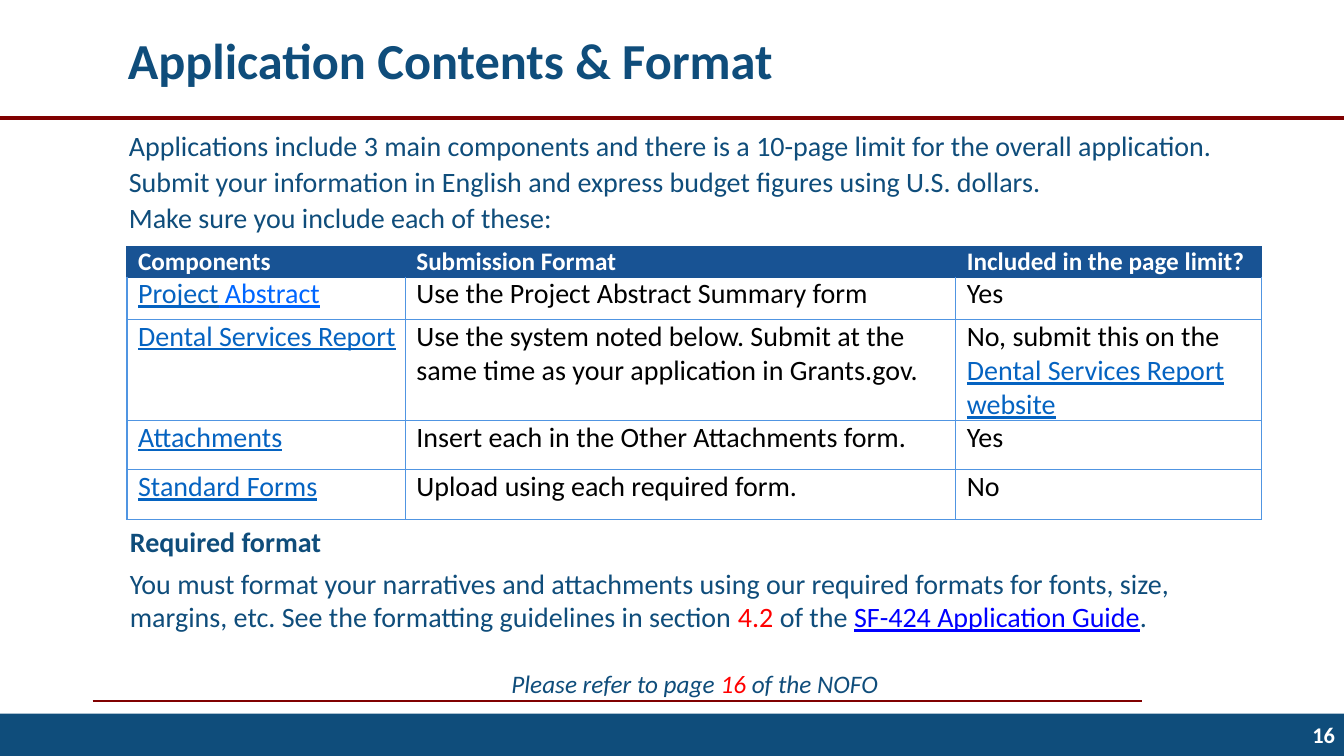
"""Build the slide on application contents and format."""
from lxml import etree
from pptx import Presentation
from pptx import util as u
from pptx.dml.color import RGBColor
from pptx.enum import shapes, text
from pptx.oxml import ns

NAVY = RGBColor(0x0F, 0x4D, 0x7B)
MAROON = RGBColor(0x80, 0x00, 0x00)
HEADER = RGBColor(0x18, 0x53, 0x94)
GRID = RGBColor(0x50, 0x95, 0xE2)
LINK = RGBColor(0x05, 0x63, 0xC1)
BRIGHT_LINK = RGBColor(0x00, 0x66, 0xFF)
GUIDE_LINK = RGBColor(0x00, 0x00, 0xFF)
RED = RGBColor(0xFF, 0x00, 0x00)
BLACK = RGBColor(0x00, 0x00, 0x00)
WHITE = RGBColor(0xFF, 0xFF, 0xFF)

WIDTH, HEIGHT = 13.33, 7.5
BAND = 0.42
BAND_TOP = HEIGHT - BAND
TITLE_HEIGHT = 1.17


def link(words, color=LINK):
    return words, {"color": color, "underline": True}


def red(words):
    return words, {"color": RED}


MIDDLE = {"vertical_anchor": text.MSO_ANCHOR.MIDDLE}
INTRO_SPACING = {"line_spacing": u.Pt(22), "space_before": u.Pt(2), "space_after": u.Pt(2)}
AFTER = {"space_after": u.Pt(6)}

TEXTS = [
    {"place": (1.17, 0, 11.25, TITLE_HEIGHT), "frame": MIDDLE,
     "font": {"size": 36, "bold": True},
     "lines": [["Application Contents & Format"]]},
    {"place": (1.18, 1.25, 11.96, 1.2), "font": {"size": 20}, "para": INTRO_SPACING,
     "lines": [
         ["Applications include 3 main components and there is a 10-page limit for the overall application."],
         ["Submit your information in English and express budget figures using U.S. dollars."],
         ["Make sure you include each of these:"]]},
    {"place": (1.19, 5.15, 11.4, 1.19), "font": {"size": 20}, "para": AFTER,
     "lines": [
         [("Required format", {"bold": True})],
         ["You must format your narratives and attachments using our required formats for fonts, size, "
          "margins, etc. See the formatting guidelines in section ", red("4.2"), " of the ",
          link("SF-424 Application Guide", GUIDE_LINK), "."]]},
    {"place": (4.89, 6.58, 4, 0.4), "font": {"size": 18, "italic": True},
     "para": {"alignment": text.PP_ALIGN.CENTER},
     "lines": [["Please refer to page ", red("16 "), "of the NOFO"]]},
    {"place": (12.28, BAND_TOP, 1.06, BAND), "frame": MIDDLE,
     "font": {"size": 16, "bold": True, "color": WHITE},
     "para": {"alignment": text.PP_ALIGN.RIGHT}, "lines": [["16"]]},
]

COLUMNS = [2.76, 5.46, 3.03]
ROWS = [0.3, 0.42, 1, 0.49, 0.49]
TABLE_LEFT, TABLE_TOP = 1.26, 2.45
CELLS = [
    [["Components"], ["Submission Format"], ["Included in the page limit?"]],
    [[link("Project"), link(" Abstract", BRIGHT_LINK)],
     ["Use the Project Abstract Summary form"], ["Yes"]],
    [[link("Dental Services Report")],
     ["Use the system noted below. Submit at the same time as your application in Grants.gov."],
     ["No, submit this on the ", link("Dental Services Report website")]],
    [[link("Attachments")], ["Insert each in the Other Attachments form."], ["Yes"]],
    [[link("Standard Forms")], ["Upload using each required form."], ["No"]],
]
HEADER_FONT = {"size": 18, "bold": True, "color": WHITE}
CELL_FONT = {"size": 20, "bold": False, "color": BLACK}
CELL_FRAME = {"margin_left": u.Inches(0.11), "margin_right": u.Inches(0.07),
              "margin_top": 0, "margin_bottom": 0}

RULES = [(0, WIDTH, TITLE_HEIGHT, 3), (0.92, 11.33, 6.95, 1.5)]


def apply(target, values):
    for name, value in values.items():
        setattr(target, name, value)


def inches(*lengths):
    return [u.Inches(length) for length in lengths]


def write_line(para, pieces, font):
    for piece in pieces:
        words, changes = piece if isinstance(piece, tuple) else (piece, {})
        values = {"name": "Calibri", "color": NAVY, **font, **changes}
        span = para.add_run()
        span.text = words
        span.font.color.rgb = values.pop("color")
        values["size"] = u.Pt(values["size"])
        apply(span.font, values)


def add_text(page, item):
    box = page.shapes.add_textbox(*inches(*item["place"]))
    frame = box.text_frame
    apply(frame, {"word_wrap": True, **item.get("frame", {})})
    for index, pieces in enumerate(item["lines"]):
        para = frame.add_paragraph() if index else frame.paragraphs[0]
        apply(para, item.get("para", {}))
        if index == 0:
            para.space_before = u.Pt(0)
        write_line(para, pieces, item["font"])


def add_rule(page, left, right, top, weight):
    rule = page.shapes.add_connector(shapes.MSO_CONNECTOR.STRAIGHT, *inches(left, top, right, top))
    rule.line.color.rgb = MAROON
    rule.line.width = u.Pt(weight)
    etree.SubElement(rule._element.spPr, ns.qn("a:effectLst"))


def add_borders(cell, colors):
    properties = cell._tc.get_or_add_tcPr()
    for index, (side, color) in enumerate(colors.items()):
        line = etree.Element(ns.qn("a:ln" + side), w=str(u.Pt(1)))
        fill = etree.SubElement(line, ns.qn("a:solidFill"))
        etree.SubElement(fill, ns.qn("a:srgbClr"), val=str(color))
        properties.insert(index, line)


def add_components(page):
    place = inches(TABLE_LEFT, TABLE_TOP, sum(COLUMNS), sum(ROWS))
    table = page.shapes.add_table(len(ROWS), len(COLUMNS), *place).table
    apply(table, {"first_row": False, "horz_banding": False})
    for column, width in zip(table.columns, COLUMNS):
        column.width = u.Inches(width)
    for number, (row, height) in enumerate(zip(table.rows, ROWS)):
        row.height = u.Inches(height)
        for cell, pieces in zip(row.cells, CELLS[number]):
            apply(cell, CELL_FRAME)
            para = cell.text_frame.paragraphs[0]
            apply(para, AFTER)
            write_line(para, pieces, CELL_FONT if number else HEADER_FONT)
            if number:
                cell.fill.background()
            else:
                cell.fill.solid()
                cell.fill.fore_color.rgb = HEADER
            edge = GRID if number else HEADER
            top = GRID if number > 1 else HEADER
            add_borders(cell, {"L": edge, "R": edge, "T": top, "B": edge})


def main():
    deck = Presentation()
    deck.slide_width, deck.slide_height = inches(WIDTH, HEIGHT)
    page = deck.slides.add_slide(deck.slide_layouts[6])
    for rule in RULES:
        add_rule(page, *rule)
    band = page.shapes.add_shape(shapes.MSO_SHAPE.RECTANGLE, *inches(0, BAND_TOP, WIDTH, BAND))
    band.shadow.inherit = False
    band.fill.solid()
    band.fill.fore_color.rgb = NAVY
    band.line.fill.background()
    for item in TEXTS:
        add_text(page, item)
    add_components(page)
    deck.save("out.pptx")


if __name__ == "__main__":
    main()
